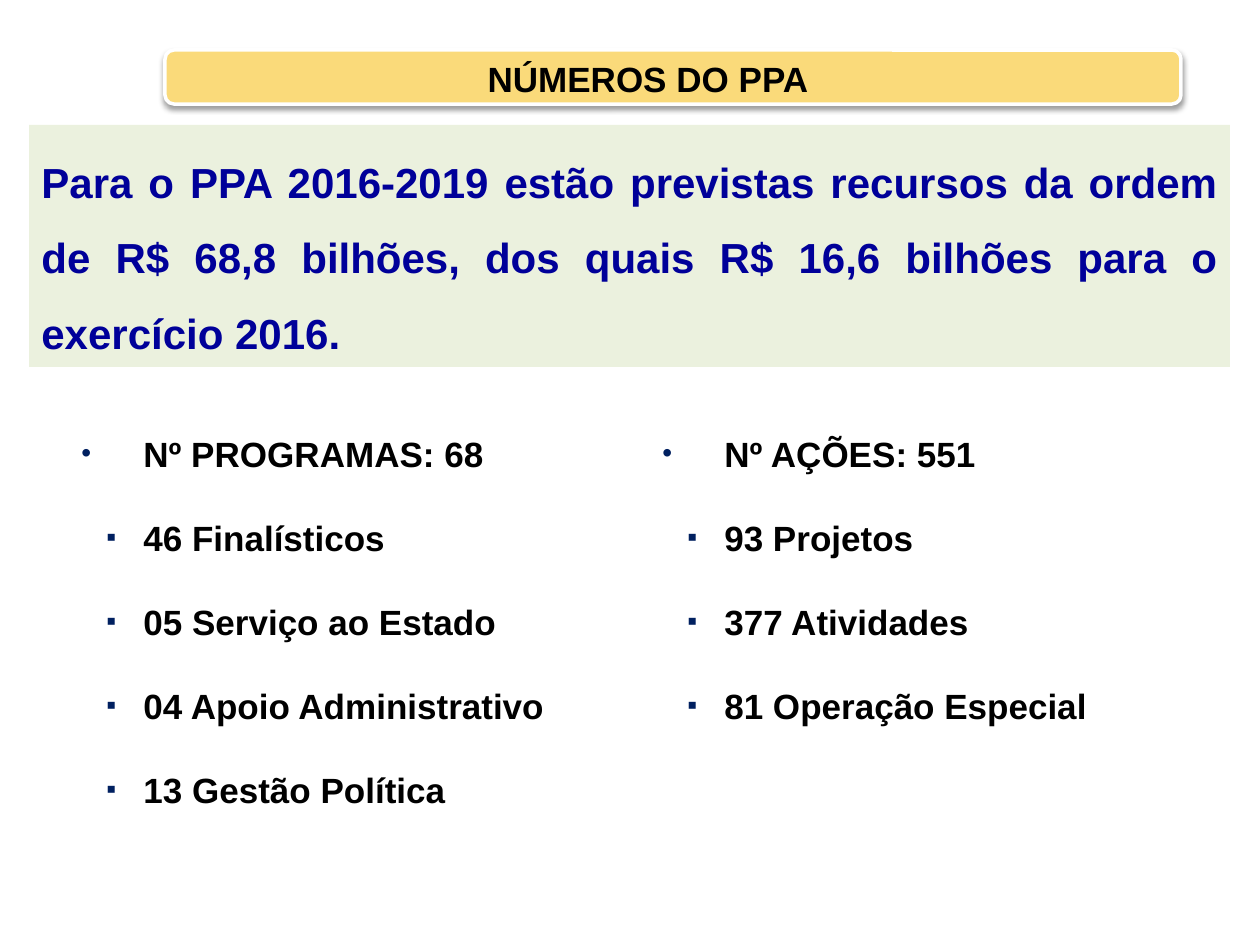
"""Build the slide with the key figures of the PPA."""
from dataclasses import dataclass

from lxml import etree
from pptx import Presentation, util as u
from pptx.dml.color import RGBColor
from pptx.enum import shapes, text
from pptx.oxml.ns import qn

PX_PER_INCH = 126
BLACK = RGBColor(0x00, 0x00, 0x00)
WHITE = RGBColor(0xFF, 0xFF, 0xFF)
GOLD = RGBColor(0xFA, 0xDA, 0x7A)
PALE_GREEN = RGBColor(0xEB, 0xF1, 0xDE)
NAVY = RGBColor(0x00, 0x20, 0x60)
BLUE = RGBColor(0x00, 0x00, 0x99)
HANGING = 62
ITEM_INDENT = 37


@dataclass(frozen=True)
class Box:
    left: int
    top: int
    width: int
    height: int


@dataclass(frozen=True)
class FigureList:
    box: Box
    heading: str
    items: tuple[str, ...]


LISTS = (
    FigureList(Box(69, 384, 561, 437), "Nº PROGRAMAS: 68",
               ("46 Finalísticos", "05 Serviço ao Estado",
                "04 Apoio Administrativo", "13 Gestão Política")),
    FigureList(Box(650, 384, 493, 352), "Nº AÇÕES: 551",
               ("93 Projetos", "377 Atividades", "81 Operação Especial")),
)


def emu(px: int) -> int:
    return u.Emu(round(px * u.Inches(1) / PX_PER_INCH))


def place(box: Box) -> tuple[int, ...]:
    return tuple(emu(n) for n in (box.left, box.top, box.width, box.height))


def add_panel(s, kind, box: Box, fill: RGBColor):
    sp = s.shapes.add_shape(kind, *place(box))
    sp.shadow.inherit = False
    sp.fill.solid()
    sp.fill.fore_color.rgb = fill
    sp.line.fill.background()
    return sp


def add_shadow(sp) -> None:
    effects = sp._element.spPr.find(qn("a:effectLst"))
    shadow = etree.SubElement(effects, qn("a:outerShdw"), blurRad=str(u.Pt(3)),
                              dist=str(u.Pt(2)), dir="5400000", rotWithShape="0")
    color = etree.SubElement(shadow, qn("a:srgbClr"), val=str(BLACK))
    etree.SubElement(color, qn("a:alpha"), val="40000")


def add_bullet(p, char: str, indent: int) -> None:
    pPr = p._p.get_or_add_pPr()
    pPr.set("marL", str(emu(HANGING)))
    pPr.set("indent", str(-emu(indent)))
    color = etree.SubElement(pPr, qn("a:buClr"))
    etree.SubElement(color, qn("a:srgbClr"), val=str(NAVY))
    etree.SubElement(pPr, qn("a:buSzPct"), val="80000")
    etree.SubElement(pPr, qn("a:buFont"), typeface="Arial")
    etree.SubElement(pPr, qn("a:buChar"), char=char)


def write(p, words: str, size: int, color: RGBColor, **paragraph_format) -> None:
    for name, value in paragraph_format.items():
        setattr(p, name, value)
    r = p.add_run()
    r.text = words
    for name, value in {"name": "Arial", "size": u.Pt(size), "bold": True}.items():
        setattr(r.font, name, value)
    r.font.color.rgb = color


def add_text_frame(s, box: Box):
    tf = s.shapes.add_textbox(*place(box)).text_frame
    tf.word_wrap = True
    return tf


def add_title(s) -> None:
    sp = add_panel(s, shapes.MSO_SHAPE.ROUNDED_RECTANGLE, Box(165, 50, 1016, 54), GOLD)
    sp.line.color.rgb = WHITE
    sp.line.width = u.Pt(2)
    add_shadow(sp)
    tf = add_text_frame(s, Box(174, 29, 948, 98))
    tf.vertical_anchor = text.MSO_ANCHOR.MIDDLE
    write(tf.paragraphs[0], "NÚMEROS DO PPA", 20, BLACK, alignment=text.PP_ALIGN.CENTER)


def add_figure_list(s, figures: FigureList) -> None:
    tf = add_text_frame(s, figures.box)
    rows = [("•", HANGING, figures.heading)]
    rows += [("▪", ITEM_INDENT, item) for item in figures.items]
    for i, (char, indent, words) in enumerate(rows):
        p = tf.add_paragraph() if i else tf.paragraphs[0]
        add_bullet(p, char, indent)
        write(p, words, 20, BLACK, alignment=text.PP_ALIGN.JUSTIFY, line_spacing=2.0)


def add_summary(s) -> None:
    sp = add_panel(s, shapes.MSO_SHAPE.RECTANGLE, Box(29, 125, 1201, 242), PALE_GREEN)
    tf = sp.text_frame
    tf.word_wrap = True
    tf.vertical_anchor = text.MSO_ANCHOR.TOP
    write(tf.paragraphs[0],
          "Para o PPA 2016-2019 estão previstas recursos da ordem de R$ 68,8 bilhões, "
          "dos quais R$ 16,6 bilhões para o exercício 2016.",
          24, BLUE, alignment=text.PP_ALIGN.JUSTIFY, line_spacing=1.5)


def main() -> None:
    prs = Presentation()
    prs.slide_width, prs.slide_height = u.Inches(10), u.Inches(7.5)
    s = prs.slides.add_slide(prs.slide_layouts[6])
    add_title(s)
    for figures in LISTS:
        add_figure_list(s, figures)
    add_summary(s)
    prs.save("out.pptx")


if __name__ == "__main__":
    main()
